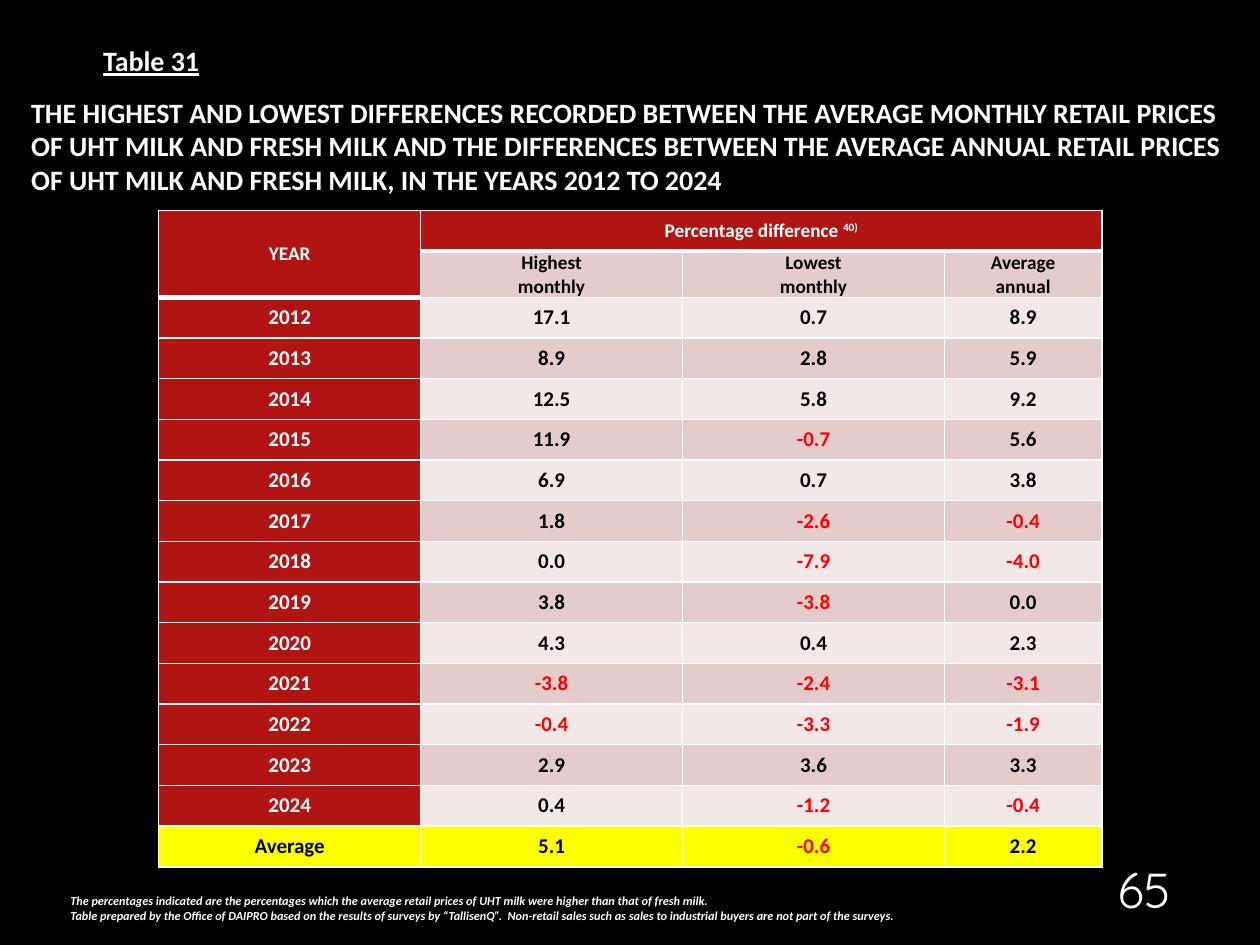
from lxml import etree
from pptx import Presentation
from pptx.dml.color import RGBColor
from pptx.enum import text
from pptx.oxml.ns import qn
from pptx.util import Cm, Pt

COLORS = {"background": "000000", "white": "FFFFFF", "black": "000000",
          "negative": "FF0000", "header": "B01513", "average": "FFFF00",
          "dark band": "E4CCCC", "light band": "F2E8E7"}

TEXTS = [
    {"lines": ["The percentages indicated are the percentages which the average retail prices "
               "of UHT milk were higher than that of fresh milk.",
               "Table prepared by the Office of DAIPRO based on the results of surveys by "
               "“TallisenQ”.  Non-retail sales such as sales to industrial buyers are not "
               "part of the surveys."],
     "box": (1.17, 17.88, 23.93, 0.86), "anchor": "MIDDLE", "size": 7, "italic": True},
    {"lines": ["Table 31"],
     "box": (1.83, 0.76, 3.58, 0.94), "anchor": "TOP", "size": 16, "underline": True},
    {"lines": ["THE HIGHEST AND LOWEST DIFFERENCES RECORDED BETWEEN THE AVERAGE MONTHLY "
               "RETAIL PRICES OF UHT MILK AND FRESH MILK AND THE DIFFERENCES BETWEEN THE "
               "AVERAGE ANNUAL RETAIL PRICES OF UHT MILK AND FRESH MILK, IN THE YEARS "
               "2012 TO 2024"],
     "box": (0.38, 1.78, 24.69, 2.31), "anchor": "MIDDLE", "size": 16},
    {"lines": ["65"], "box": (21.87, 16.79, 2.39, 1.85), "anchor": "BOTTOM", "size": 28,
     "font": "Quicksand", "bold": False, "align": "CENTER"},
]

HEADINGS = [
    ("YEAR", "Percentage difference ", "", ""),
    ("", "Highest\nmonthly", "Lowest\nmonthly", "Average\nannual"),
]
FOOTNOTE_MARK = "40)"
DIFFERENCES = [
    ("2012", "17.1", "0.7", "8.9"),
    ("2013", "8.9", "2.8", "5.9"),
    ("2014", "12.5", "5.8", "9.2"),
    ("2015", "11.9", "-0.7", "5.6"),
    ("2016", "6.9", "0.7", "3.8"),
    ("2017", "1.8", "-2.6", "-0.4"),
    ("2018", "0.0", "-7.9", "-4.0"),
    ("2019", "3.8", "-3.8", "0.0"),
    ("2020", "4.3", "0.4", "2.3"),
    ("2021", "-3.8", "-2.4", "-3.1"),
    ("2022", "-0.4", "-3.3", "-1.9"),
    ("2023", "2.9", "3.6", "3.3"),
    ("2024", "0.4", "-1.2", "-0.4"),
    ("Average", "5.1", "-0.6", "2.2"),
]
ROWS = HEADINGS + DIFFERENCES
TABLE_LEFT, TABLE_TOP = 3.2, 4.24
COLUMN_WIDTHS = (5.28, 5.28, 5.28, 3.17)
ROW_HEIGHT = 0.82


def color(name):
    return RGBColor.from_string(COLORS[name])


def style(paragraph, size, color_name, font="Calibri", bold=True, italic=False,
          underline=False, align="LEFT"):
    paragraph.alignment = getattr(text.PP_ALIGN, align)
    paragraph.font.name = font
    paragraph.font.size = Pt(size)
    paragraph.font.bold = bold
    paragraph.font.italic = italic
    paragraph.font.underline = underline
    paragraph.font.color.rgb = color(color_name)


def add_text(slide, lines, box, anchor, size, **look):
    frame = slide.shapes.add_textbox(*map(Cm, box)).text_frame
    frame.word_wrap = True
    frame.vertical_anchor = getattr(text.MSO_ANCHOR, anchor)
    frame.text = "\n".join(lines)
    for paragraph in frame.paragraphs:
        style(paragraph, size, "white", **look)


def set_borders(cell, widths):
    properties = cell._tc.get_or_add_tcPr()
    for index, (side, width) in enumerate(widths.items()):
        line = etree.Element(qn(f"a:ln{side}"), w=str(Pt(width)))
        fill = etree.SubElement(line, qn("a:solidFill"))
        etree.SubElement(fill, qn("a:srgbClr"), val=COLORS["white"])
        properties.insert(index, line)


def cell_colors(row, column, value):
    if row == len(ROWS) - 1:
        fill = "average"
    elif row == 0 or column == 0:
        fill = "header"
    else:
        fill = "dark band" if row % 2 else "light band"
    if value.startswith("-"):
        return fill, "negative"
    return fill, "white" if fill == "header" else "black"


def add_difference_table(slide):
    table = slide.shapes.add_table(
        len(ROWS), len(COLUMN_WIDTHS), Cm(TABLE_LEFT), Cm(TABLE_TOP),
        Cm(sum(COLUMN_WIDTHS)), Cm(ROW_HEIGHT * len(ROWS))).table
    for column, width in zip(table.columns, COLUMN_WIDTHS):
        column.width = Cm(width)
    for row in table.rows:
        row.height = Cm(ROW_HEIGHT)
    table.cell(0, 0).merge(table.cell(1, 0))
    table.cell(0, 1).merge(table.cell(0, 3))

    for row, values in enumerate(ROWS):
        for column, value in enumerate(values):
            cell = table.cell(row, column)
            fill, font_color = cell_colors(row, column, value)
            cell.margin_left = cell.margin_right = Cm(0.13)
            cell.margin_top = cell.margin_bottom = 0
            cell.vertical_anchor = text.MSO_ANCHOR.TOP if row == 1 else text.MSO_ANCHOR.MIDDLE
            cell.fill.solid()
            cell.fill.fore_color.rgb = color(fill)
            cell.text = value
            for paragraph in cell.text_frame.paragraphs:
                style(paragraph, 11 if row < len(HEADINGS) else 12, font_color, align="CENTER")
            heading_end = 1 if column == 0 else 0
            set_borders(cell, {"L": 1, "R": 1,
                               "T": 3 if row == heading_end + 1 else 1,
                               "B": 3 if row in (0, heading_end) else 1})

    mark = table.cell(0, 1).text_frame.paragraphs[0].add_run()
    mark.text = FOOTNOTE_MARK
    mark.font._element.set("baseline", "30000")


def main():
    presentation = Presentation()
    presentation.slide_width, presentation.slide_height = Cm(25.4), Cm(19.05)
    slide = presentation.slides.add_slide(presentation.slide_layouts[6])
    slide.background.fill.solid()
    slide.background.fill.fore_color.rgb = color("background")
    for item in TEXTS:
        add_text(slide, **item)
    add_difference_table(slide)
    presentation.save("out.pptx")


if __name__ == "__main__":
    main()
